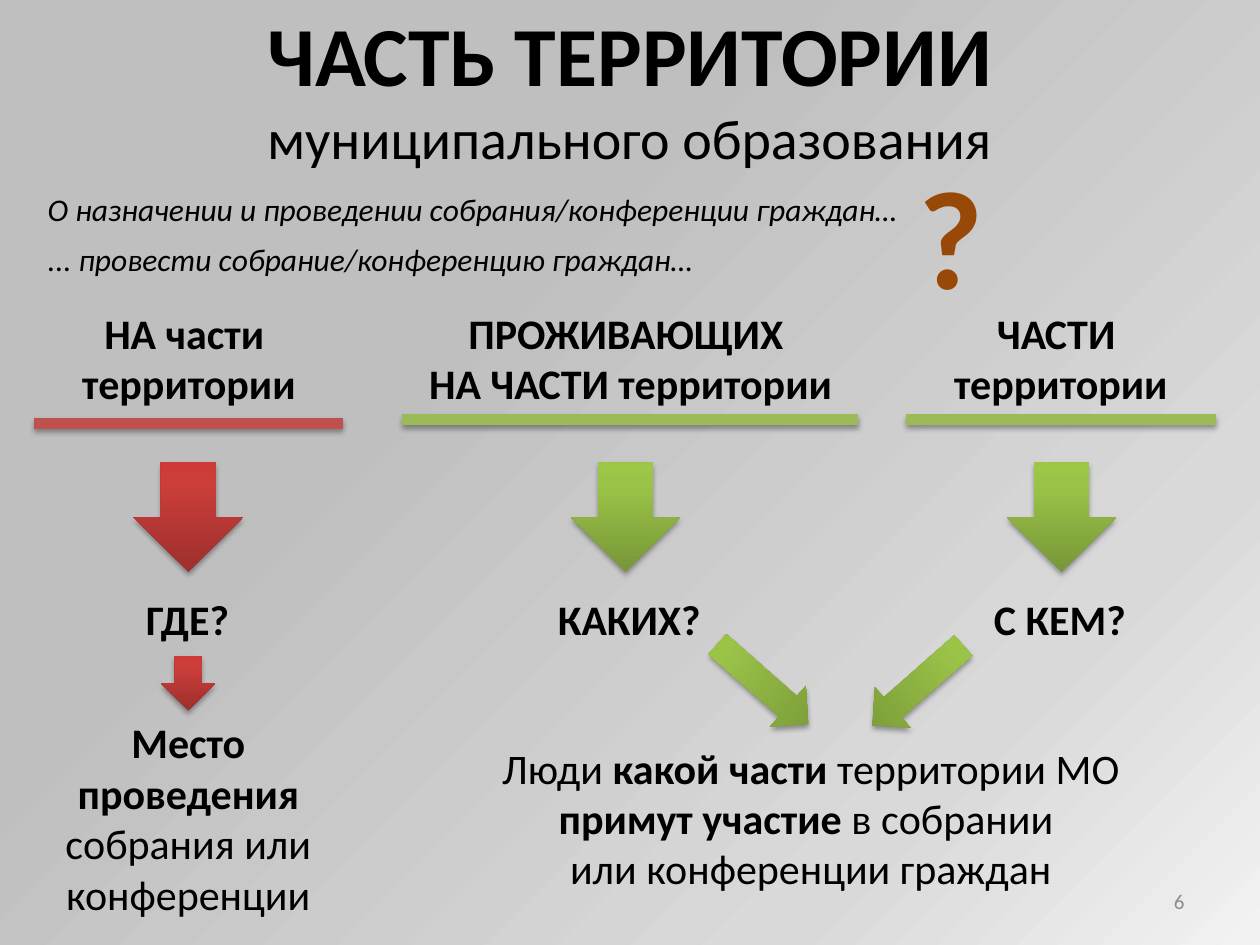
from typing import NamedTuple

from lxml import etree
from pptx import Presentation
from pptx.dml.color import RGBColor
from pptx.enum.shapes import MSO_CONNECTOR, MSO_SHAPE
from pptx.enum.text import MSO_ANCHOR, MSO_AUTO_SIZE, PP_ALIGN
from pptx.oxml.ns import qn
from pptx.util import Inches, Pt

LEFT, MID, RIGHT = PP_ALIGN.LEFT, PP_ALIGN.CENTER, PP_ALIGN.RIGHT
TOP, MIDDLE = MSO_ANCHOR.TOP, MSO_ANCHOR.MIDDLE
GROW, FIXED = MSO_AUTO_SIZE.SHAPE_TO_FIT_TEXT, MSO_AUTO_SIZE.NONE
DOWN, STRAIGHT = MSO_SHAPE.DOWN_ARROW, MSO_CONNECTOR.STRAIGHT

BLACK = RGBColor(0x00, 0x00, 0x00)
GREY = RGBColor(0x8C, 0x8C, 0x8C)
BROWN = RGBColor(0x98, 0x48, 0x07)
RED = RGBColor(0xC0, 0x50, 0x4D)
GREEN = RGBColor(0x9B, 0xBB, 0x59)

Stops = list[tuple[int, RGBColor]]
BACK: Stops = [(0, RGBColor(0xF2, 0xF2, 0xF2)), (22, RGBColor(0xD9, 0xD9, 0xD9)),
               (65, RGBColor(0xBF, 0xBF, 0xBF))]
REDS: Stops = [(0, RGBColor(0x9C, 0x2F, 0x2D)), (80, RGBColor(0xCB, 0x3E, 0x3A)),
               (100, RGBColor(0xCE, 0x3B, 0x37))]
GREENS: Stops = [(0, RGBColor(0x77, 0x97, 0x37)), (80, RGBColor(0x9B, 0xC3, 0x48)),
                 (100, RGBColor(0x9D, 0xC7, 0x46))]

# The slide is a grid of 100 columns by 75 rows of square cells
COLS, ROWS = 100, 75
WIDTH, HEIGHT = Inches(10), Inches(7.5)


class Box(NamedTuple):
    col: float
    row: float
    wide: float
    high: float

    def emu(self) -> tuple[int, int, int, int]:
        return (round(WIDTH * self.col / COLS), round(HEIGHT * self.row / ROWS),
                round(WIDTH * self.wide / COLS), round(HEIGHT * self.high / ROWS))


class Run(NamedTuple):
    text: str
    bold: bool = False
    size: float = 24


class Branch(NamedTuple):
    head: list[str]
    left: float
    wide: float
    wrap: bool
    rule: Box
    arrow: float
    ask: str
    ask_left: float
    ask_wide: float
    color: RGBColor
    stops: Stops


BRANCHES = [
    Branch(["НА части ", "территории"], 5.4, 19.2, False, Box(2.7, 33.6, 24.5, 0),
           10.6, "ГДЕ?", 10.6, 8.6, RED, REDS),
    Branch(["ПРОЖИВАЮЩИХ ", "НА ЧАСТИ территории"], 32.9, 34.3, True,
           Box(31.9, 33.3, 36.2, 0), 45.3, "КАКИХ?", 43.3, 13.4, GREEN, GREENS),
    Branch(["ЧАСТИ ", "территории"], 74.6, 19.2, False, Box(71.9, 33.3, 24.6, 0),
           79.9, "С КЕМ?", 77.9, 12.6, GREEN, GREENS),
]


def add(parent, tag: str, **attrs):
    """Append a DrawingML child element."""
    child = etree.SubElement(parent, qn(tag))
    for name, value in attrs.items():
        child.set(name, str(value))
    return child


def set_grad(fill, stops: Stops):
    """Give a fill its colour stops; return the element for its direction."""
    fill.gradient()
    grad = fill._xPr.find(qn("a:gradFill"))
    for child in list(grad):
        grad.remove(child)
    items = add(grad, "a:gsLst")
    for share, color in stops:
        add(add(items, "a:gs", pos=share * 1000), "a:srgbClr", val=color)
    return grad


def add_shade(shape) -> None:
    """Soft black shadow straight below."""
    effects = add(shape._element.spPr, "a:effectLst")
    shade = add(effects, "a:outerShdw", blurRad=Pt(3.1), dist=Pt(1.8),
                dir=5400000, rotWithShape=0)
    add(add(shade, "a:srgbClr", val=BLACK), "a:alpha", val=35000)


def add_text(slide, box: Box, lines: list[list[Run]], *, color=BLACK, align=LEFT,
             italic=False, wrap=True, anchor=TOP, auto=GROW) -> None:
    frame = slide.shapes.add_textbox(*box.emu()).text_frame
    frame.word_wrap, frame.auto_size = wrap, auto
    frame.vertical_anchor = anchor
    for n, line in enumerate(lines):
        para = frame.paragraphs[0] if n == 0 else frame.add_paragraph()
        para.alignment = align
        for part in line:
            run = para.add_run()
            run.text = part.text
            font = run.font
            font.name, font.size = "Calibri", Pt(part.size)
            font.bold, font.italic = part.bold, italic
            font.color.rgb = color


def add_rule(slide, box: Box, color: RGBColor) -> None:
    x, y, wide, high = box.emu()
    rule = slide.shapes.add_connector(STRAIGHT, x, y, x + wide, y + high)
    rule.line.color.rgb, rule.line.width = color, Pt(6)
    add_shade(rule)


def add_arrow(slide, box: Box, stops: Stops, turn: float = 0) -> None:
    arrow = slide.shapes.add_shape(DOWN, *box.emu())
    arrow.rotation = turn
    grad = set_grad(arrow.fill, stops)
    add(grad, "a:lin", ang=270 * 60000, scaled=0)
    arrow.line.fill.background()
    add_shade(arrow)


def main() -> None:
    deck = Presentation()
    deck.slide_width, deck.slide_height = WIDTH, HEIGHT
    slide = deck.slides.add_slide(deck.slide_layouts[6])

    # Background glow from the lower right corner
    glow = add(set_grad(slide.background.fill, BACK), "a:path", path="circle")
    add(glow, "a:fillToRect", l=100000, t=100000)

    # Title and the wording in question
    add_text(slide, Box(0, -0.3, 100, 14.5),
             [[Run("ЧАСТЬ ТЕРРИТОРИИ", True, 48)],
              [Run("муниципального образования", size=32)]], align=MID)
    add_text(slide, Box(2.8, 14.6, 69.8, 4),
             [[Run("О назначении и проведении собрания/конференции граждан…", size=18)]],
             italic=True, wrap=False)
    add_text(slide, Box(2.8, 18.6, 53.9, 4),
             [[Run("... провести собрание/конференцию граждан…", size=18)]],
             italic=True, wrap=False)
    add_text(slide, Box(71.9, 11.4, 6.9, 14.5), [[Run("?", True, 80)]],
             color=BROWN, wrap=False)

    # Three branches: heading, rule, arrow, question
    for b in BRANCHES:
        add_text(slide, Box(b.left, 23.9, b.wide, 9.1),
                 [[Run(line, True)] for line in b.head], align=MID, wrap=b.wrap)
        add_rule(slide, b.rule, b.color)
        add_arrow(slide, Box(b.arrow, 36.7, 8.7, 8.7), b.stops)
        add_text(slide, Box(b.ask_left, 46.6, b.ask_wide, 5), [[Run(b.ask, True)]],
                 wrap=False)

    # Arrows to the answers
    add_arrow(slide, Box(12.8, 52.1, 4.3, 4.3), REDS)
    add_arrow(slide, Box(58.4, 49.5, 4.3, 9.6), GREENS, 311.3)
    add_arrow(slide, Box(70.7, 49.6, 4.3, 9.6), GREENS, 48.7)

    # Answers
    add_text(slide, Box(0.6, 56.4, 28.7, 17.2),
             [[Run("Место проведения ", True), Run("собрания или конференции")]],
             align=MID)
    add_text(slide, Box(38.5, 58.4, 51.7, 13.1),
             [[Run("Люди "), Run("какой части ", True), Run("территории МО ")],
              [Run("примут участие", True), Run(" в собрании ")],
              [Run("или конференции граждан")]], align=MID)

    # Slide number
    add_text(slide, Box(71.7, 69.5, 23.3, 4), [[Run("6", size=12)]], color=GREY,
             align=RIGHT, anchor=MIDDLE, auto=FIXED)

    deck.save("out.pptx")


if __name__ == "__main__":
    main()
